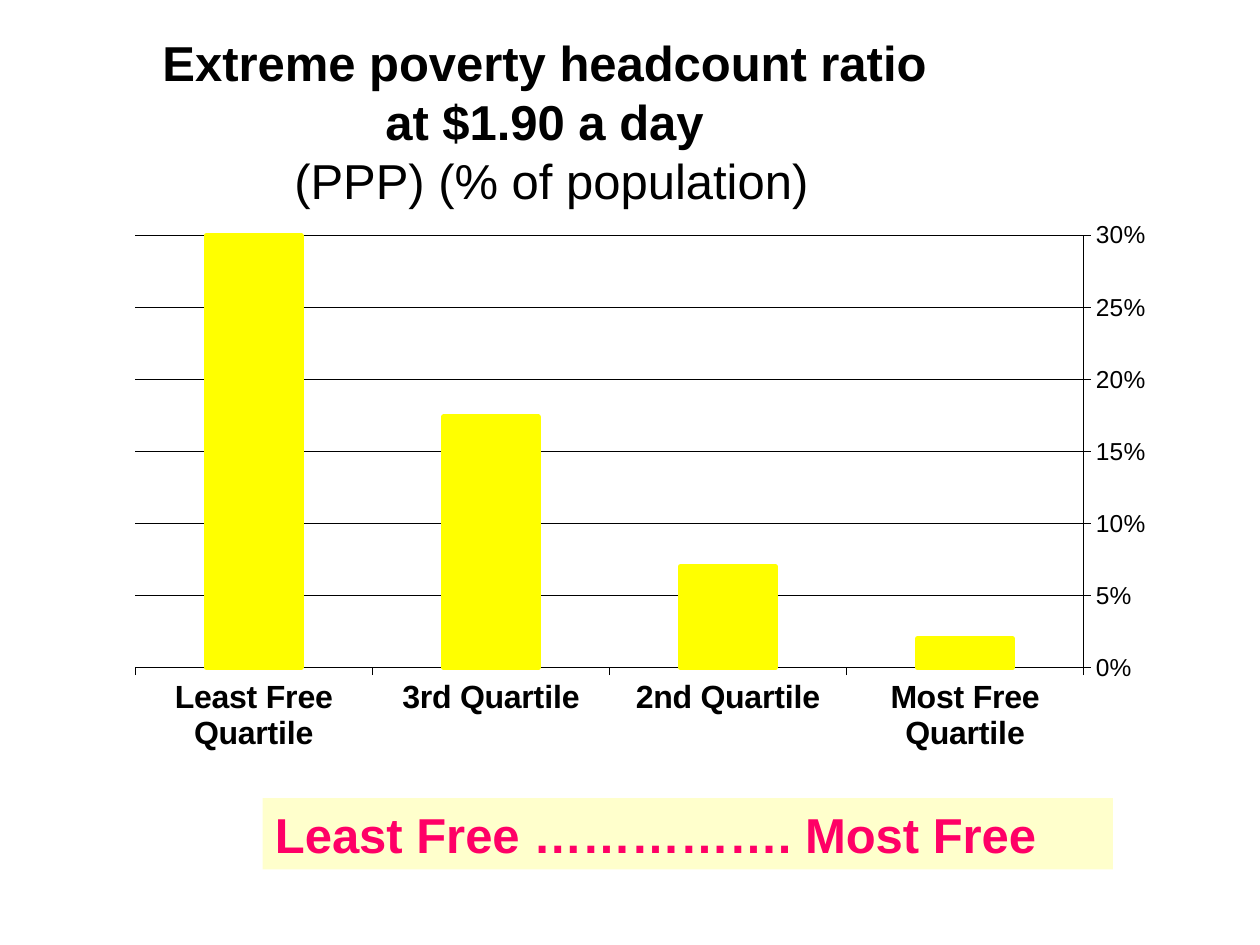
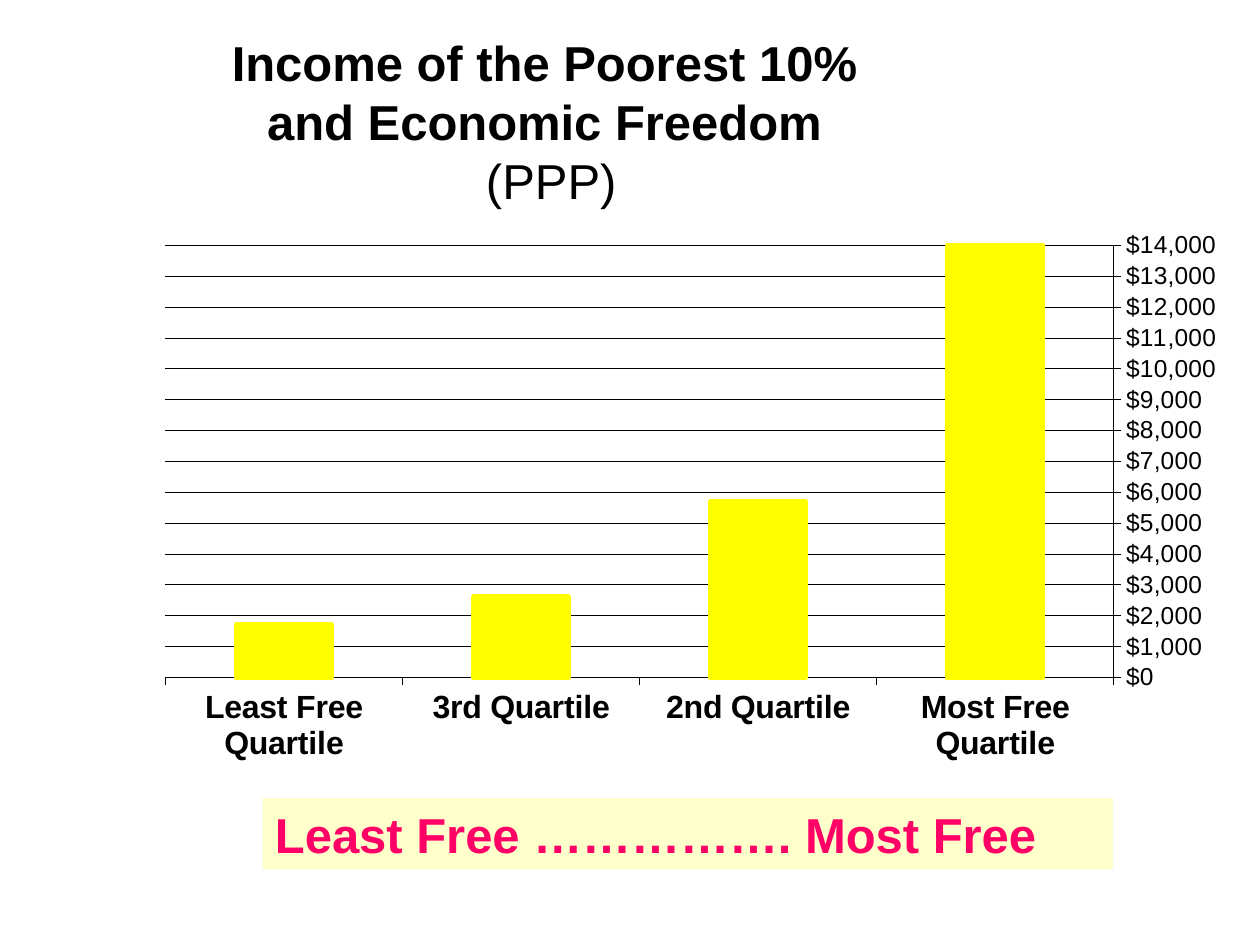
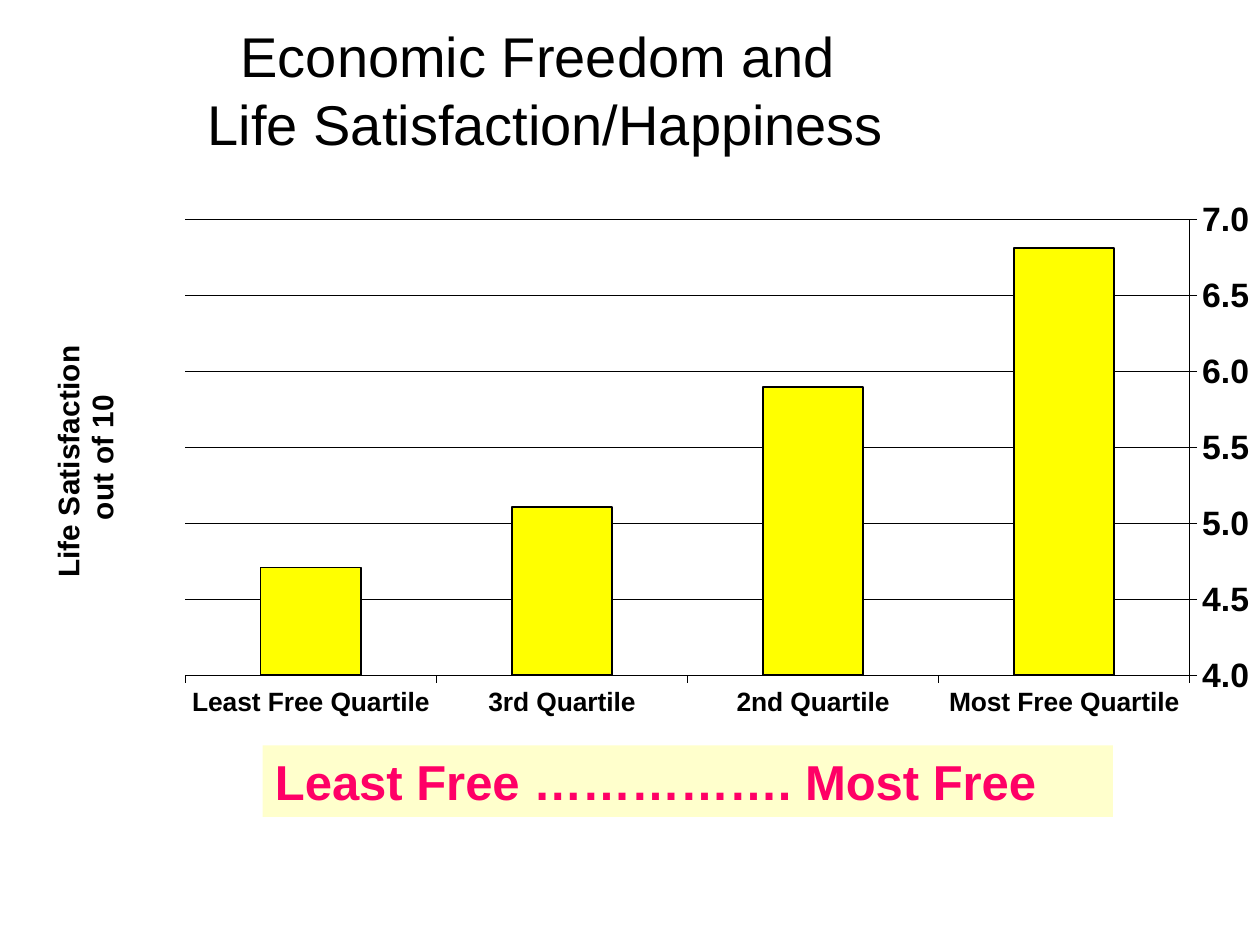
from dataclasses import dataclass

from lxml.etree import SubElement
from pptx import Presentation
from pptx.chart.data import CategoryChartData
from pptx.dml.color import RGBColor
from pptx.enum.chart import XL_CHART_TYPE, XL_TICK_LABEL_POSITION, XL_TICK_MARK
from pptx.enum.shapes import MSO_SHAPE
from pptx.enum.text import MSO_ANCHOR, PP_ALIGN
from pptx.oxml import parse_xml
from pptx.oxml.ns import nsdecls, qn
from pptx.util import Inches, Pt


@dataclass(frozen=True)
class Theme:
    font: str = "Arial"
    ink: str = "000000"
    bar: str = "FFFF00"
    band: str = "FFFFCC"
    band_ink: str = "FF0066"
    title_size: float = 28
    large_title_size: float = 32
    band_size: float = 28
    hairline: float = 0.25


@dataclass(frozen=True)
class Box:
    """A region in grid cells; the slide is 120 columns by 90 rows."""
    col: float
    row: float
    cols: float
    rows: float

    def lengths(self):
        return [Inches(n * CELL) for n in (self.col, self.row, self.cols, self.rows)]


@dataclass(frozen=True)
class ChartStyle:
    plot: tuple  # left, top, width, height as shares of the chart
    number_format: str
    low: float
    high: float
    step: float
    category_size: float = 18.3
    value_size: float = 14
    value_bold: bool = False
    edge: str = "FFFF00"
    edge_width: float = 3.05
    value_title: str = ""


THEME = Theme()
CELL = 1 / 12
COLS, ROWS = 120, 90
TITLE_BOX = Box(0, 0, 105, 23)
BAND_BOX = Box(25, 76, 81, 6.8)
# The category axis runs from right to left.
QUARTILES = ["Most Free Quartile", "2nd Quartile", "3rd Quartile", "Least Free Quartile"]


def color(code):
    return RGBColor.from_string(code)


def style_font(font, size, bold=False, ink=THEME.ink):
    font.name, font.size, font.bold = THEME.font, Pt(size), bold
    font.color.rgb = color(ink)


def style_line(line, width=THEME.hairline, ink=THEME.ink):
    line.color.rgb = color(ink)
    line.width = Pt(width)


def add_text(paragraph, text, **font_format):
    """Append text to a paragraph, with a line break at each newline."""
    for number, line in enumerate(text.split("\n")):
        if number:
            paragraph.add_line_break()
        if line:
            run = paragraph.add_run()
            run.text = line
            style_font(run.font, **font_format)


def add_title(slide, box, heading, detail="", size=THEME.title_size, bold=True):
    frame = slide.shapes.add_textbox(*box.lengths()).text_frame
    frame.word_wrap = True
    frame.vertical_anchor = MSO_ANCHOR.MIDDLE
    paragraph = frame.paragraphs[0]
    paragraph.alignment = PP_ALIGN.CENTER
    add_text(paragraph, heading, size=size, bold=bold)
    add_text(paragraph, detail, size=size)


def add_freedom_band(slide, box):
    band = slide.shapes.add_shape(MSO_SHAPE.RECTANGLE, *box.lengths())
    band.shadow.inherit = False
    band.fill.solid()
    band.fill.fore_color.rgb = color(THEME.band)
    band.line.fill.background()
    frame = band.text_frame
    frame.word_wrap = True
    frame.vertical_anchor = MSO_ANCHOR.TOP
    paragraph = frame.paragraphs[0]
    paragraph.alignment = PP_ALIGN.LEFT
    add_text(paragraph, "Least Free ……………. Most Free",
             size=THEME.band_size, bold=True, ink=THEME.band_ink)


def set_layout(parent, position, inner=False, **shares):
    """Fix a chart part by shares (x, y, w, h) of the chart's size."""
    previous = parent.find(qn("c:layout"))
    if previous is not None:
        parent.remove(previous)
    layout = parse_xml(f"<c:layout {nsdecls('c')}/>")
    manual = SubElement(layout, qn("c:manualLayout"))
    if inner:
        SubElement(manual, qn("c:layoutTarget")).set("val", "inner")
    for mode in ("xMode", "yMode"):
        SubElement(manual, qn(f"c:{mode}")).set("val", "edge")
    for side, share in shares.items():
        SubElement(manual, qn(f"c:{side}")).set("val", str(share))
    parent.insert(position, layout)


def style_axis(axis, size, bold):
    axis.major_tick_mark = XL_TICK_MARK.OUTSIDE
    axis.minor_tick_mark = XL_TICK_MARK.NONE
    style_line(axis.format.line)
    style_font(axis.tick_labels.font, size, bold)


def add_value_title(axis, text):
    """Stand the axis title upright at the left edge of the chart."""
    title = axis.axis_title
    frame = title.text_frame
    add_text(frame.paragraphs[0], text, size=17, bold=True)
    body = frame._txBody.find(qn("a:bodyPr"))
    body.set("rot", "-5400000")
    body.set("vert", "horz")
    set_layout(title._element, 1, x=0.02, y=0.2)


def add_quartile_chart(slide, box, values, style):
    data = CategoryChartData()
    data.categories = QUARTILES
    data.add_series("Series 1", values)
    chart = slide.shapes.add_chart(
        XL_CHART_TYPE.COLUMN_CLUSTERED, *box.lengths(), data).chart
    chart.has_legend = chart.has_title = False
    style_font(chart.font, style.category_size, True)

    columns = chart.plots[0]
    columns.gap_width = 150
    columns.vary_by_categories = False
    bars = columns.series[0].format
    bars.fill.solid()
    bars.fill.fore_color.rgb = color(THEME.bar)
    style_line(bars.line, style.edge_width, style.edge)

    quartile_axis = chart.category_axis
    quartile_axis.reverse_order = True
    quartile_axis.tick_label_position = XL_TICK_LABEL_POSITION.LOW
    style_axis(quartile_axis, style.category_size, True)

    value_axis = chart.value_axis
    value_axis.minimum_scale, value_axis.maximum_scale = style.low, style.high
    value_axis.major_unit = style.step
    value_axis.has_major_gridlines = True
    style_line(value_axis.major_gridlines.format.line)
    style_axis(value_axis, style.value_size, style.value_bold)
    value_axis.tick_labels.number_format = style.number_format
    value_axis.tick_labels.number_format_is_linked = False
    if style.value_title:
        add_value_title(value_axis, style.value_title)

    plot_area = chart._chartSpace.chart.plotArea
    set_layout(plot_area, 0, inner=True, **dict(zip("xywh", style.plot)))


def add_quartile_slide(deck, title, chart_box, values, style,
                       title_box=TITLE_BOX, band_box=BAND_BOX):
    slide = deck.slides.add_slide(deck.slide_layouts[6])
    add_title(slide, title_box, **title)
    add_quartile_chart(slide, chart_box, values, style)
    add_freedom_band(slide, band_box)


def main():
    deck = Presentation()
    deck.slide_width, deck.slide_height = Inches(COLS * CELL), Inches(ROWS * CELL)

    add_quartile_slide(
        deck,
        dict(heading="Extreme poverty headcount ratio \nat $1.90 a day \n",
             detail="(PPP) (% of population)"),
        Box(-2, 19, 119, 53.6),
        [0.02, 0.07, 0.174, 0.314],
        ChartStyle((0.125, 0.064, 0.759, 0.768), "0%", 0, 0.3, 0.05))
    add_quartile_slide(
        deck,
        dict(heading="Income of the Poorest 10% \nand Economic Freedom \n",
             detail="(PPP)"),
        Box(1, 21, 119, 53.6),
        [14200, 5700, 2600, 1700],
        ChartStyle((0.124, 0.044, 0.759, 0.768), r"\$#,##0", 0, 14000, 1000))
    add_quartile_slide(
        deck,
        dict(heading="Economic Freedom and \nLife Satisfaction/Happiness",
             size=THEME.large_title_size, bold=False),
        Box(2, 19, 117, 63.4),
        [6.81, 5.9, 5.11, 4.71],
        ChartStyle((0.134, 0.03, 0.819, 0.685), "0.0", 4, 7, 0.5,
                   category_size=15.1, value_size=19.3, value_bold=True,
                   edge=THEME.ink, edge_width=1.06,
                   value_title="Life Satisfaction \nout of 10"),
        title_box=Box(3, 0, 98, 17),
        band_box=Box(25, 71, 81, 6.8))
    deck.save("out.pptx")


if __name__ == "__main__":
    main()
